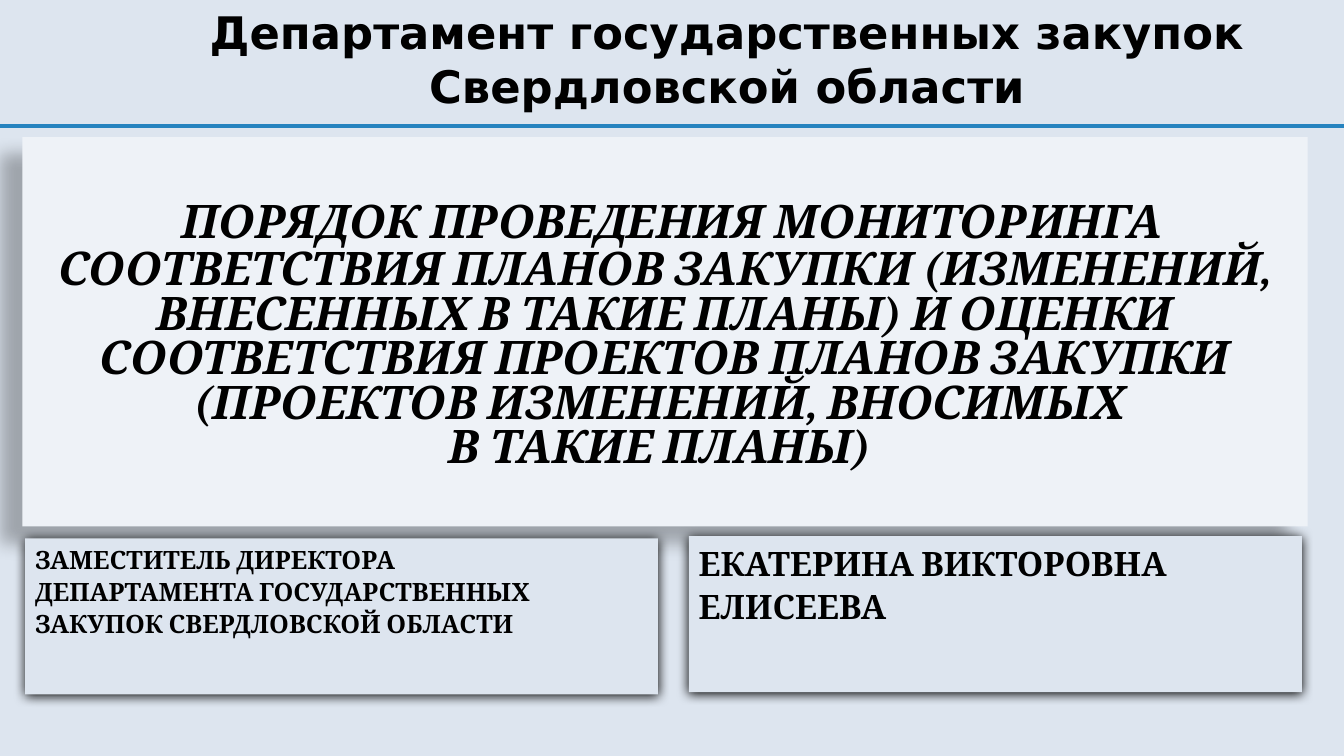
from pptx import Presentation
from pptx.dml.color import RGBColor
from pptx.enum.shapes import MSO_CONNECTOR, MSO_SHAPE
from pptx.enum.text import MSO_ANCHOR, PP_ALIGN
from pptx.oxml import parse_xml
from pptx.oxml.ns import nsdecls
from pptx.util import Pt

# Content: each paragraph is a list of (text, size) runs, "\n" breaks the line
DEPARTMENT = [[("Департамент государственных закупок Свердловской области", 32)]]
TOPIC = [[
    (" ", 44),
    ("ПОРЯДОК ПРОВЕДЕНИЯ МОНИТОРИНГА СООТВЕТСТВИЯ ПЛАНОВ ЗАКУПКИ (ИЗМЕНЕНИЙ, "
     "ВНЕСЕННЫХ В ТАКИЕ ПЛАНЫ) И ОЦЕНКИ СООТВЕТСТВИЯ ПРОЕКТОВ ПЛАНОВ ЗАКУПКИ "
     "(ПРОЕКТОВ ИЗМЕНЕНИЙ, ВНОСИМЫХ \nВ ТАКИЕ ПЛАНЫ) ", 33),
]]
POSITION = [[("ЗАМЕСТИТЕЛЬ ДИРЕКТОРА", 18)],
            [("ДЕПАРТАМЕНТА ГОСУДАРСТВЕННЫХ ЗАКУПОК СВЕРДЛОВСКОЙ ОБЛАСТИ", 18)]]
SPEAKER = [[("ЕКАТЕРИНА ВИКТОРОВНА", 24)], [("ЕЛИСЕЕВА", 24)]]

# Colours and formats
BLACK = RGBColor(0x00, 0x00, 0x00)
SKY = RGBColor(0xDD, 0xE5, 0xEF)
PALE = RGBColor(0xEE, 0xF2, 0xF7)
BLUE = RGBColor(0x26, 0x83, 0xBF)

HEADER_FONT = {"name": "DejaVu Sans", "bold": True}
TOPIC_FONT = {"name": "Cambria", "bold": True, "italic": True}
CARD_FONT = {"name": "Cambria", "bold": True}

CENTRED = {"alignment": PP_ALIGN.CENTER}
TOPIC_LINES = {"alignment": PP_ALIGN.CENTER, "line_spacing": 0.8}
CARD_LINES = {"alignment": PP_ALIGN.LEFT, "line_spacing": 1.05}

# Shadows: opacity %, blur pt, distance pt, direction degrees
TOPIC_SHADOW = (28, 11.8, 19.7, 141)
CARD_SHADOW = (100, 8.5, 1, 90)

# Panels: box (left, top, width, height), fill, shadow, anchor, lines, font, text
PANELS = [
    ((16, 98, 918, 278), PALE, TOPIC_SHADOW, MSO_ANCHOR.MIDDLE,
     TOPIC_LINES, TOPIC_FONT, TOPIC),
    ((18, 384.5, 452, 111.5), SKY, CARD_SHADOW, MSO_ANCHOR.TOP,
     CARD_LINES, CARD_FONT, POSITION),
    ((492, 383, 438, 111.5), SKY, CARD_SHADOW, MSO_ANCHOR.TOP,
     CARD_LINES, CARD_FONT, SPEAKER),
    ((134, 0, 771, 85), SKY, None, MSO_ANCHOR.TOP,
     CENTRED, HEADER_FONT, DEPARTMENT),
]
RULE_TOP = 90


def apply(target, formats):
    for key, value in formats.items():
        setattr(target, key, value)


def cast_shadow(panel, opacity, blur, distance, direction):
    panel._element.spPr.append(parse_xml(
        f'<a:effectLst {nsdecls("a")}><a:outerShdw blurRad="{Pt(blur)}" '
        f'dist="{Pt(distance)}" dir="{direction * 60000}" algn="ctr" rotWithShape="0">'
        f'<a:srgbClr val="000000"><a:alpha val="{opacity * 1000}"/></a:srgbClr>'
        '</a:outerShdw></a:effectLst>'))


def write(frame, paragraphs, lines, font):
    for index, runs in enumerate(paragraphs):
        paragraph = frame.add_paragraph() if index else frame.paragraphs[0]
        apply(paragraph, lines)
        for text, size in runs:
            for part, line in enumerate(text.split("\n")):
                if part:
                    paragraph.add_line_break()
                run = paragraph.add_run()
                run.text = line
                apply(run.font, {**font, "size": Pt(size)})
                run.font.color.rgb = BLACK


def add_panel(slide, box, fill, shadow, anchor, lines, font, paragraphs):
    panel = slide.shapes.add_shape(MSO_SHAPE.RECTANGLE, *map(Pt, box))
    panel.fill.solid()
    panel.fill.fore_color.rgb = fill
    panel.line.fill.background()
    if shadow:
        cast_shadow(panel, *shadow)
    else:
        panel.shadow.inherit = False
    apply(panel.text_frame, {"word_wrap": True, "vertical_anchor": anchor})
    write(panel.text_frame, paragraphs, lines, font)


def add_rule(slide, width):
    rule = slide.shapes.add_connector(
        MSO_CONNECTOR.STRAIGHT, 0, Pt(RULE_TOP), width, Pt(RULE_TOP))
    rule.line.color.rgb = BLUE
    rule.line.width = Pt(2.25)
    rule._element.spPr.append(parse_xml(f'<a:effectLst {nsdecls("a")}/>'))


def main():
    deck = Presentation()
    apply(deck, {"slide_width": Pt(960), "slide_height": Pt(540)})
    slide = deck.slides.add_slide(deck.slide_layouts[6])
    slide.background.fill.solid()
    slide.background.fill.fore_color.rgb = SKY

    # Topic and cards, then the rule, then the header
    *body, header = PANELS
    for panel in body:
        add_panel(slide, *panel)
    add_rule(slide, deck.slide_width)
    add_panel(slide, *header)
    deck.save("out.pptx")


if __name__ == "__main__":
    main()
